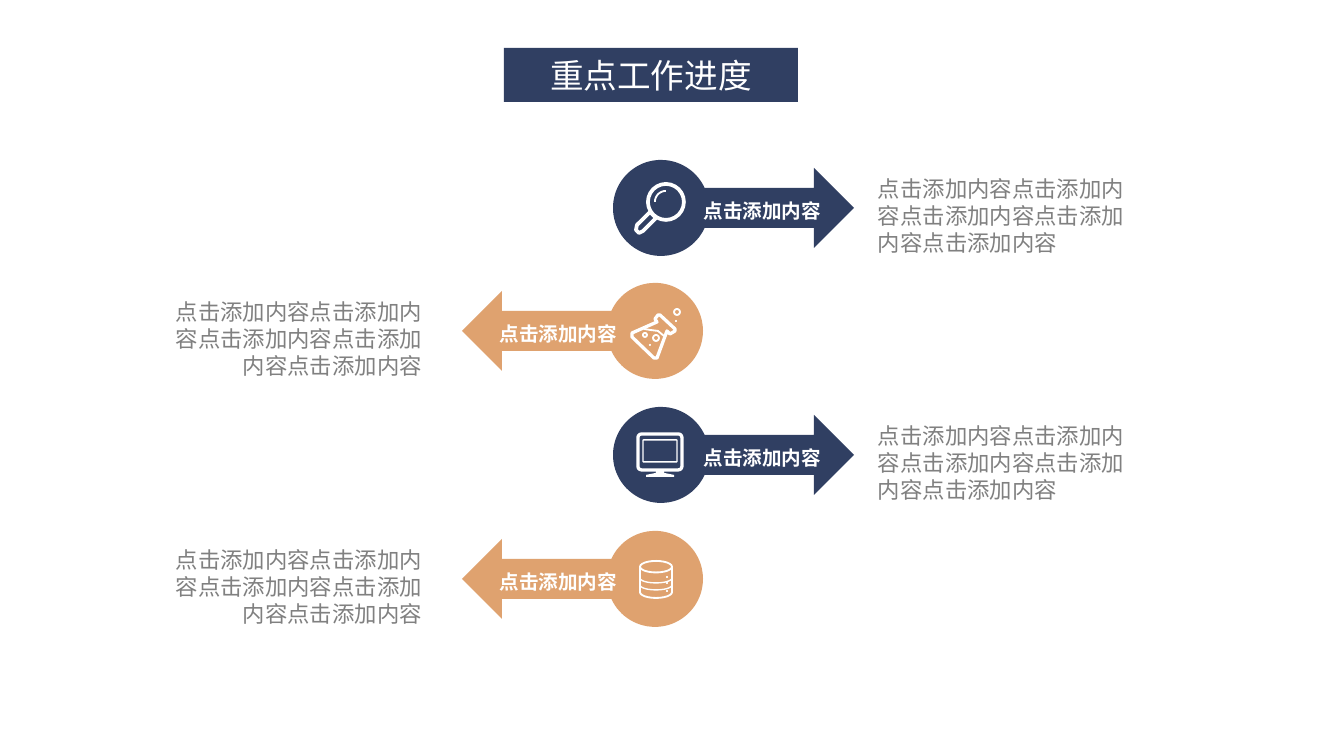
from math import asin, cos, degrees, radians, sin

from pptx import Presentation
from pptx.dml.color import RGBColor
from pptx.enum.shapes import MSO_SHAPE as Shape
from pptx.enum.text import MSO_ANCHOR as Anchor, PP_ALIGN as Align
from pptx.util import Pt

# Content
TITLE = "重点工作进度"
LABEL = "点击添加内容"
BODY = LABEL * 5
COLORS = {"navy": "303F62", "sand": "DFA26F", "white": "FFFFFF", "gray": "808080"}
ROWS = [  # side, icon, centre of the circle (y)
    ("right", "magnifier", 208),
    ("left", "flask", 331),
    ("right", "monitor", 455),
    ("left", "database", 579),
]
SIDES = {
    "right": dict(direction=1, color="navy", center=661, label=689, body=878, align=Align.LEFT),
    "left": dict(direction=-1, color="sand", center=655, label=485, body=167, align=Align.RIGHT),
}

# Sizes in px
PAGE = (1344, 756)
SCALE = 914400 / 134.4
RADIUS, SHAFT, HEAD, NECK, TIP = 48, 20, 40, 153, 193


def arc(cx, cy, rx, ry, start, end, steps=40):
    """Points along an ellipse, angles in degrees, clockwise from the right."""
    angles = [radians(start + (end - start) * i / steps) for i in range(steps + 1)]
    return [(cx + rx * cos(a), cy + ry * sin(a)) for a in angles]


# Icon parts, px from the centre of the circle; stroke 0 means filled
ICONS = {
    "magnifier": {
        "rings": [(5, -6, 18, 2)],  # cx, cy, radius, stroke
        "paths": [  # points, stroke, closed
            ([(-11, 4), (-24, 17), (-25, 22), (-22, 25), (-18, 23), (-5, 10)], 2, True),
            (arc(5, -6, 11, 11, 180, 270), 1, False),
        ],
    },
    "flask": {
        "rings": [(1, 7, 3, 1), (22, -19, 3, 1), (-10, 4, 2, 1), (-5, 14, 1, 0), (21, -10, 1, 0)],
        "paths": [
            ([(5, -16), (20, -2), (20, 0), (15, 3), (12, 0), (2, 27), (-1, 27),
              (-23, 6), (-23, 2), (2, -9), (0, -12), (3, -16)], 1.75, True),
            ([(-11, -2), (-5, -1), (3, 0), (9, 5)], 1, False),
        ],
    },
    "monitor": {
        "blocks": [  # preset, left, top, width, height, adjustment, stroke
            (Shape.ROUNDED_RECTANGLE, -23, -21, 44, 36, 0.1, 1.75),
            (Shape.ROUNDED_RECTANGLE, -18, -15, 34, 22, 0.03, 0.75),
        ],
        "paths": [
            ([(-5, 15), (3, 15), (3, 18), (13, 20), (13, 22), (-15, 22), (-15, 20), (-5, 18)], 0, True),
        ],
    },
    "database": {
        "blocks": [(Shape.CAN, -15, -18, 32, 37, 0.36, 1)],
        "paths": [(arc(1, y, 16, 5, 0, 180), 0.75, False) for y in (-1, 6)],
        "rings": [(12, y, 1, 0) for y in (-2, 4, 12)],
    },
}


def px(value):
    return round(value * SCALE)


def rgb(name):
    return RGBColor.from_string(COLORS[name])


def paint(shape, color, stroke=0):
    """Fill the shape, or only outline it when a stroke is given."""
    shape.shadow.inherit = False
    if stroke:
        shape.fill.background()
        shape.line.color.rgb = rgb(color)
        shape.line.width = Pt(stroke)
    else:
        shape.fill.solid()
        shape.fill.fore_color.rgb = rgb(color)
        shape.line.fill.background()


def add_preset(kind, left, top, width, height, color, stroke=0):
    shape = page.shapes.add_shape(kind, px(left), px(top), px(width), px(height))
    paint(shape, color, stroke)
    return shape


def add_path(points, color, stroke=0, closed=True):
    points = [(px(x), px(y)) for x, y in points]
    builder = page.shapes.build_freeform(*points[0])
    builder.add_line_segments(points[1:], close=closed)
    paint(builder.convert_to_shape(), color, stroke)


def write(box, text, size, font, color, align, bold=None):
    box.text_frame.text = text
    para = box.text_frame.paragraphs[0]
    para.alignment = align
    span = para.runs[0]
    span.font.size, span.font.name, span.font.bold = Pt(size), font, bold
    span.font.color.rgb = rgb(color)


def add_text(left, top, width, height, *style, wrap=True, inset=None):
    box = page.shapes.add_textbox(px(left), px(top), px(width), px(height))
    frame = box.text_frame
    frame.word_wrap = wrap
    if inset is not None:
        frame.margin_left = frame.margin_right = frame.margin_top = frame.margin_bottom = inset
    write(box, *style)


def add_arrow(cx, cy, direction, color):
    """A circle that runs into an arrow, as one outline."""
    join = degrees(asin(SHAFT / RADIUS))
    outline = arc(0, 0, RADIUS, RADIUS, join, 360 - join, 72)
    outline += [(NECK, -SHAFT), (NECK, -HEAD), (TIP, 0), (NECK, HEAD), (NECK, SHAFT)]
    add_path([(cx + direction * x, cy + y) for x, y in outline], color)


def add_icon(name, cx, cy):
    icon = ICONS[name]
    for kind, left, top, width, height, adjustment, stroke in icon.get("blocks", []):
        block = add_preset(kind, cx + left, cy + top, width, height, "white", stroke)
        block.adjustments[0] = adjustment
    for points, stroke, closed in icon.get("paths", []):
        add_path([(cx + x, cy + y) for x, y in points], "white", stroke, closed)
    for x, y, radius, stroke in icon.get("rings", []):
        add_preset(Shape.OVAL, cx + x - radius, cy + y - radius,
                   2 * radius, 2 * radius, "white", stroke)


deck = Presentation()
deck.slide_width, deck.slide_height = px(PAGE[0]), px(PAGE[1])
page = deck.slides.add_slide(deck.slide_layouts[6])

# Title
banner = add_preset(Shape.RECTANGLE, 504, 48, 294, 54, "navy")
banner.text_frame.vertical_anchor = Anchor.MIDDLE
write(banner, TITLE, 18, "Arial", "white", Align.CENTER)

# Arrows with icon, label and body text
for side, icon_name, middle in ROWS:
    place = SIDES[side]
    add_text(place["body"], middle - 33, 255, 82,
             BODY, 12, "Arial", "gray", place["align"], inset=0)
    add_arrow(place["center"], middle, place["direction"], place["color"])
    add_text(place["label"], middle - 16, 147, 37,
             LABEL, 10.5, "Montserrat", "white", Align.CENTER, True, wrap=False)
    add_icon(icon_name, place["center"], middle)

deck.save("out.pptx")
